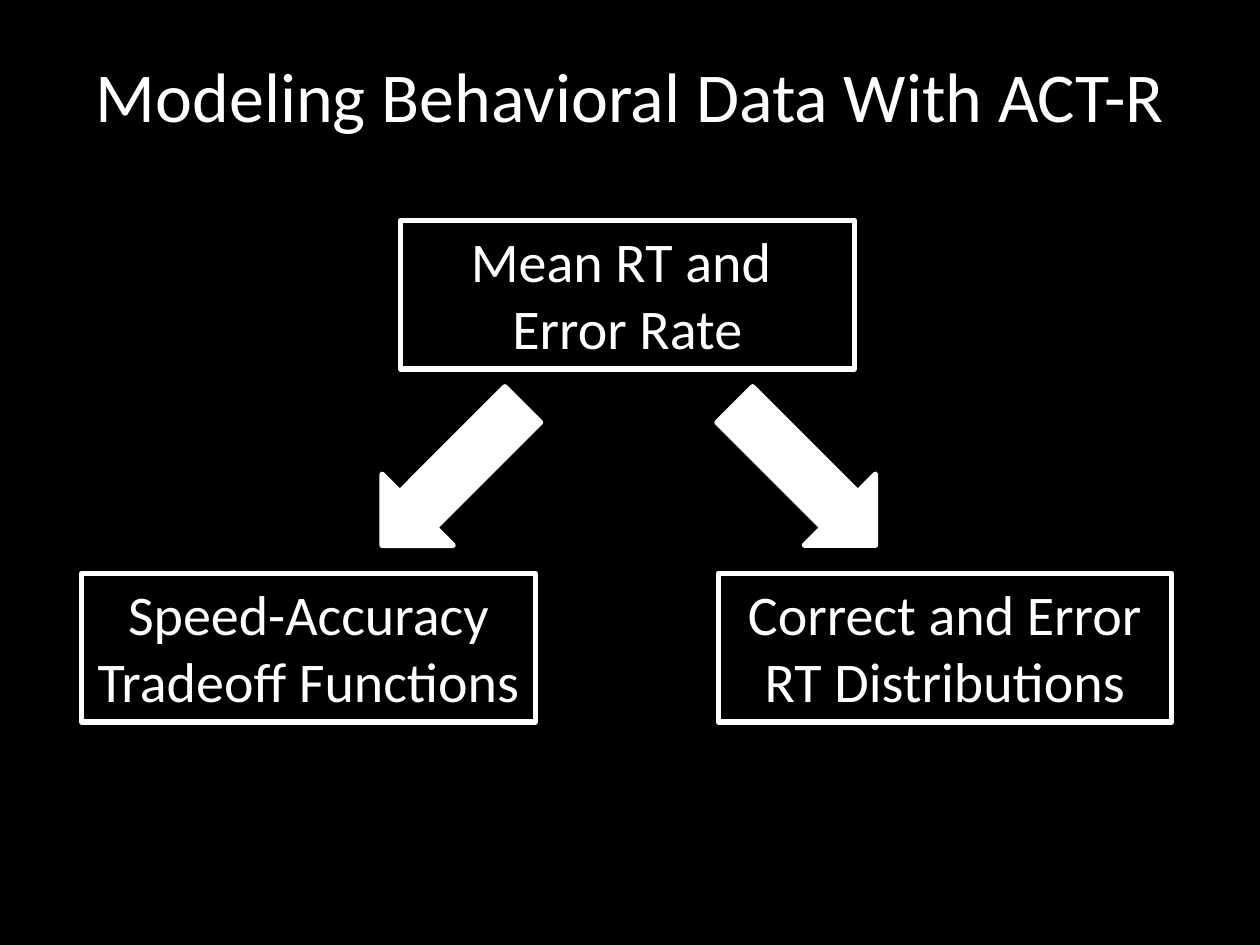
from dataclasses import dataclass

from pptx import Presentation
from pptx.dml.color import RGBColor
from pptx.enum.shapes import MSO_SHAPE
from pptx.enum.text import MSO_ANCHOR, MSO_AUTO_SIZE, PP_ALIGN
from pptx.slide import Slide
from pptx.text.text import TextFrame
from pptx.util import Inches, Pt

BLACK = RGBColor(0x00, 0x00, 0x00)
WHITE = RGBColor(0xFF, 0xFF, 0xFF)
RECT = MSO_SHAPE.RECTANGLE
ARROW = MSO_SHAPE.RIGHT_ARROW
MIDDLE, TOP = MSO_ANCHOR.MIDDLE, MSO_ANCHOR.TOP
CENTER = PP_ALIGN.CENTER
GROW = MSO_AUTO_SIZE.SHAPE_TO_FIT_TEXT
LINE_WIDTH = Pt(3)
BOX_SIZE = Inches(3.6), Inches(1.18)
ARROW_SIZE = Inches(1.58), Inches(0.8)
ARROW_TOP = Inches(3.37)


@dataclass
class Box:
    text: str
    left: float
    top: float


@dataclass
class Arrow:
    left: float
    rotation: int


BOXES = [
    Box("Speed-Accuracy Tradeoff Functions", 0.65, 4.55),
    Box("Correct and Error RT Distributions", 5.7, 4.55),
    Box("Mean RT and \vError Rate", 3.18, 1.75),
]
ARROWS = [Arrow(2.8, 135), Arrow(5.6, 45)]


def write(tf: TextFrame, text: str, size: int, anchor: MSO_ANCHOR) -> None:
    tf.word_wrap = True
    tf.vertical_anchor = anchor
    p = tf.paragraphs[0]
    p.text = text
    p.alignment = CENTER
    for r in p.runs:
        for name, value in {"name": "Calibri", "size": Pt(size)}.items():
            setattr(r.font, name, value)
        r.font.color.rgb = WHITE


def add_title(s: Slide, text: str) -> None:
    sp = s.shapes.add_textbox(Inches(0.5), Inches(0.3), Inches(9), Inches(0.9))
    write(sp.text_frame, text, 40, MIDDLE)


def add_box(s: Slide, box: Box) -> None:
    sp = s.shapes.add_shape(RECT, Inches(box.left), Inches(box.top), *BOX_SIZE)
    sp.shadow.inherit = False
    sp.fill.background()
    sp.line.color.rgb = WHITE
    sp.line.width = LINE_WIDTH
    write(sp.text_frame, box.text, 32, TOP)
    sp.text_frame.auto_size = GROW


def add_arrow(s: Slide, arrow: Arrow) -> None:
    sp = s.shapes.add_shape(ARROW, Inches(arrow.left), ARROW_TOP, *ARROW_SIZE)
    sp.shadow.inherit = False
    sp.rotation = arrow.rotation
    sp.fill.solid()
    sp.fill.fore_color.rgb = WHITE
    sp.line.color.rgb = WHITE
    sp.line.width = LINE_WIDTH


def main() -> None:
    """Build the slide on modeling behavioral data."""
    prs = Presentation()
    prs.slide_width, prs.slide_height = Inches(10), Inches(7.5)
    s = prs.slides.add_slide(prs.slide_layouts[6])
    s.background.fill.solid()
    s.background.fill.fore_color.rgb = BLACK
    add_title(s, "Modeling Behavioral Data With ACT-R")
    for box in BOXES:
        add_box(s, box)
    for arrow in ARROWS:
        add_arrow(s, arrow)
    prs.save("out.pptx")


if __name__ == "__main__":
    main()
